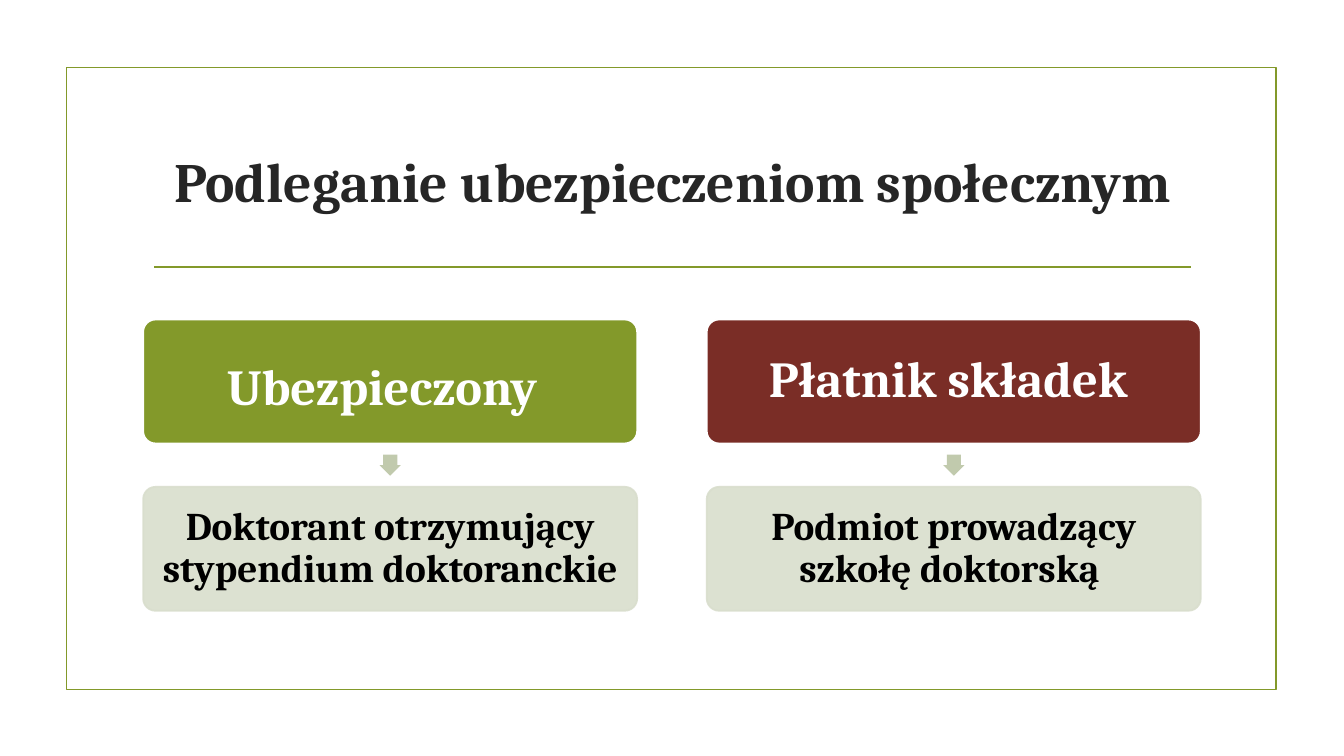
import pptx
import pptx.util
import pptx.dml.color
import pptx.enum.shapes
import pptx.enum.text
import pptx.oxml
import pptx.oxml.ns

Inches = pptx.util.Inches
Pt = pptx.util.Pt
Kind = pptx.enum.shapes.MSO_SHAPE
Align = pptx.enum.text.PP_ALIGN
Anchor = pptx.enum.text.MSO_ANCHOR

COLORS = {"green": "83992A", "red": "7A2D26", "pale": "D9DECD", "arrow": "C1CAAD",
          "title": "262626", "white": "FFFFFF", "black": "000000"}
EDGE = Pt(1.25)
SIDES = ("margin_left", "margin_top", "margin_right", "margin_bottom")


def color(name):
    return pptx.dml.color.RGBColor.from_string(COLORS[name])


def paint(fill, name, alpha=None):
    fill.solid()
    fill.fore_color.rgb = color(name)
    if alpha:
        tag = pptx.oxml.ns.qn("a:srgbClr")
        for node in fill._xPr.iter(tag):
            if node.getparent().getparent() is fill._xPr:
                mark = pptx.oxml.parse_xml(
                    f'<a:alpha {pptx.oxml.ns.nsdecls("a")} val="{alpha * 1000}"/>')
                node.append(mark)


def style(font, size, tint, bold=True):
    values = {"name": "Cambria", "size": Pt(size), "bold": bold}
    for key, value in values.items():
        setattr(font, key, value)
    font.color.rgb = color(tint)


def shape(slide, kind, box, adjust=()):
    item = slide.shapes.add_shape(kind, *map(Inches, box))
    item.shadow.inherit = False
    for i, value in enumerate(adjust):
        item.adjustments[i] = value
    return item


def frame(slide, box):
    """Draw the border and the rule below the title."""
    left, top, width, height = box
    border = shape(slide, Kind.RECTANGLE, box)
    border.fill.background()
    rule = slide.shapes.add_connector(
        pptx.enum.shapes.MSO_CONNECTOR.STRAIGHT, Inches(left + 0.87), Inches(top + 1.98),
        Inches(left + width - 0.85), Inches(top + 1.98))
    rule._element.spPr.append(pptx.oxml.parse_xml(
        f'<a:effectLst {pptx.oxml.ns.nsdecls("a")}/>'))
    for item in (border, rule):
        item.line.color.rgb = color("green")
        item.line.width = EDGE


def heading(slide, box, text):
    title = slide.shapes.title
    title.left, title.top, title.width, title.height = map(Inches, box)
    body = title.text_frame
    body.text = text
    body.auto_size = pptx.enum.text.MSO_AUTO_SIZE.NONE
    body.vertical_anchor = Anchor.MIDDLE
    para = body.paragraphs[0]
    para.alignment = Align.CENTER
    style(para.runs[0].font, 39.6, "title")


def card(slide, box, runs, fill, edge, inset, alpha=None):
    """Draw a rounded card; runs are (text, size, colour, bold)."""
    item = shape(slide, Kind.ROUNDED_RECTANGLE, box, [0.1])
    paint(item.fill, fill, alpha)
    paint(item.line.fill, edge, alpha)
    item.line.width = EDGE
    body = item.text_frame
    body.word_wrap = True
    body.vertical_anchor = Anchor.MIDDLE
    for side in SIDES:
        setattr(body, side, Inches(inset))
    para = body.paragraphs[0]
    para.alignment = Align.CENTER
    para.line_spacing = 0.9
    for text, *look in runs:
        run = para.add_run()
        run.text = text
        style(run.font, *look)


def column(slide, box, head, fill, note):
    """Stack a heading card, an arrow and a note card."""
    left, top, width, height = box
    tall, size = 1.23, 0.21
    card(slide, (left, top, width, tall), head, fill, "white", 0.05)
    place = (left + (width - size) / 2, top + (height - size) / 2, size, size)
    arrow = shape(slide, Kind.RIGHT_ARROW, place, [0.667, 0.5])
    arrow.rotation = 90
    paint(arrow.fill, "arrow")
    arrow.line.fill.background()
    card(slide, (left, top + height - tall, width, tall),
         [(note, 28, "black", True)], "pale", "pale", 0.04, 90)


def main():
    deck = pptx.Presentation()
    deck.slide_width, deck.slide_height = Inches(13.33), Inches(7.5)
    slide = deck.slides.add_slide(deck.slide_layouts.get_by_name("Title Only"))
    frame(slide, (0.66, 0.67, 12, 6.17))
    heading(slide, (1.42, 1.07, 10.5, 1.43), "Podleganie ubezpieczeniom społecznym")
    columns = [
        ([("Ubezpieczony", 36, "white", True), (" ", 53, "white", False)], "green",
         "Doktorant otrzymujący stypendium doktoranckie"),
        ([("Płatnik składek ", 36, "white", True)], "red",
         "Podmiot prowadzący szkołę doktorską "),
    ]
    for i, parts in enumerate(columns):
        column(slide, (1.42 + 5.59 * i, 3.17, 4.9, 2.89), *parts)
    deck.save("out.pptx")


if __name__ == "__main__":
    main()
